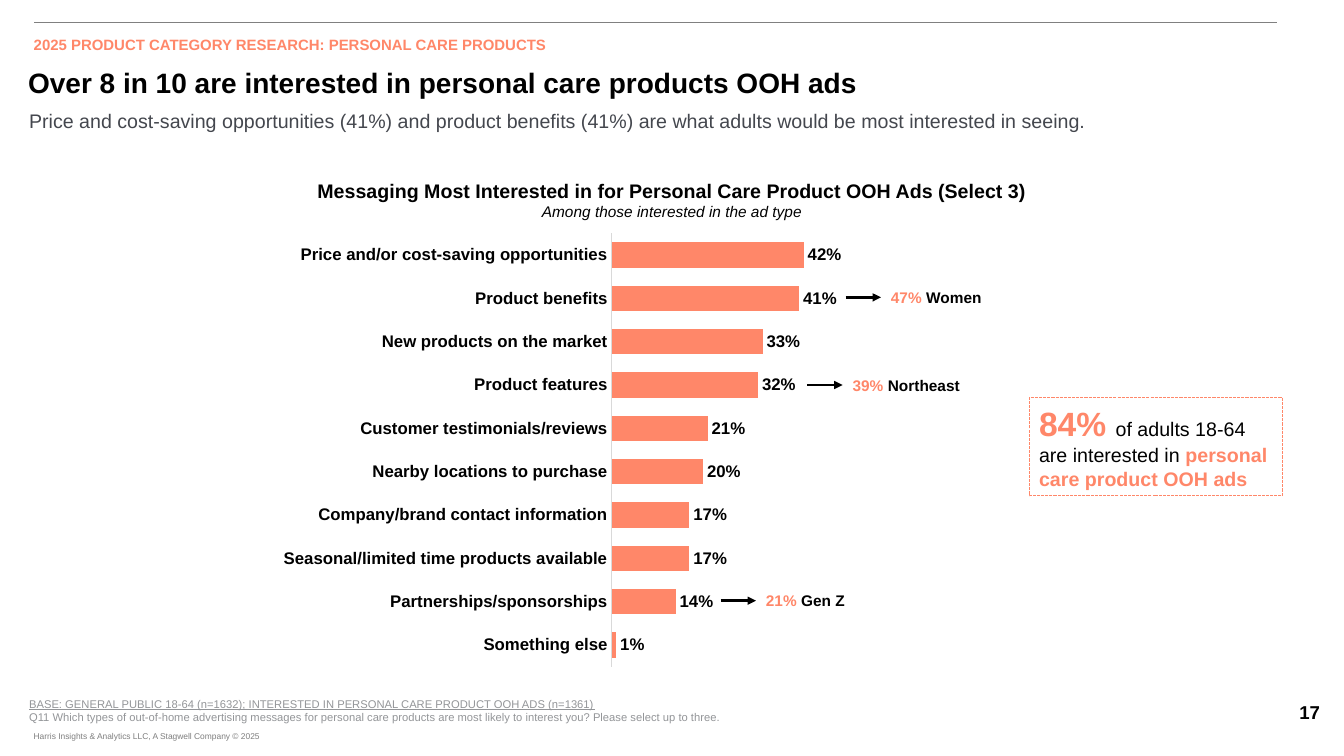
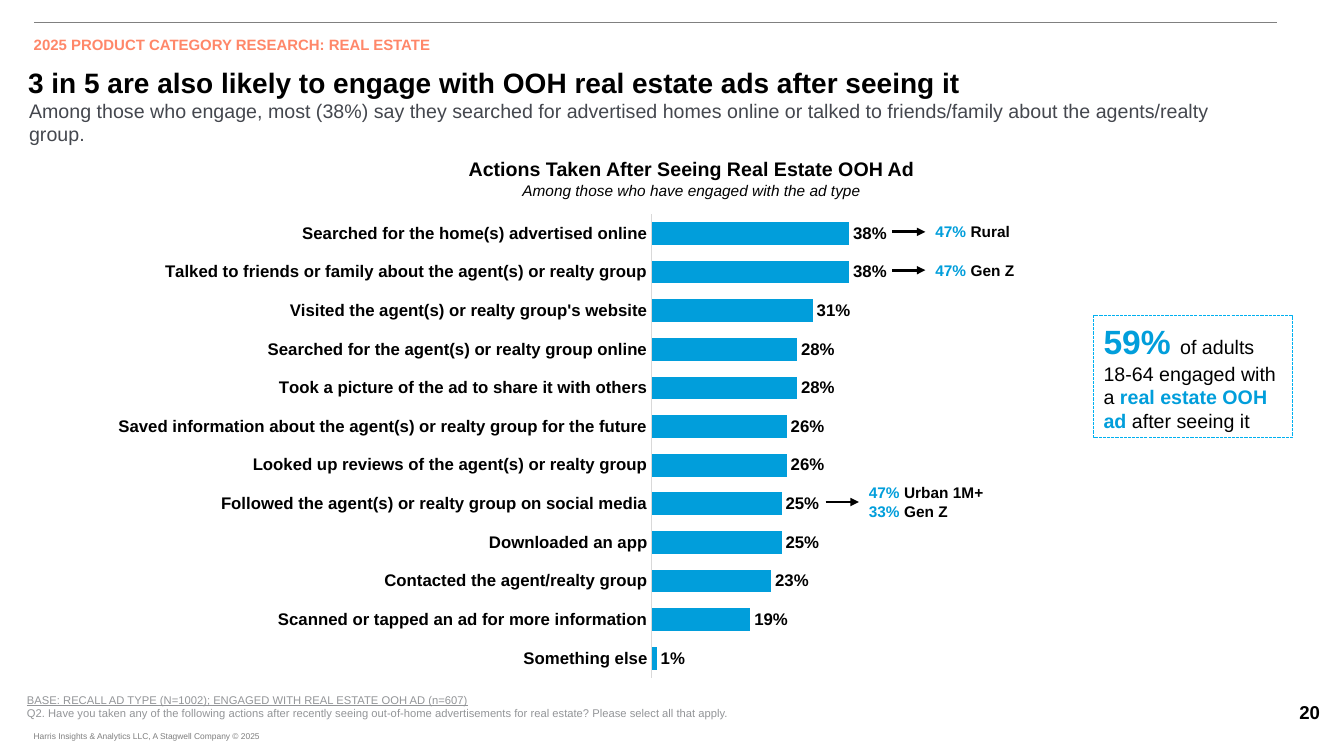
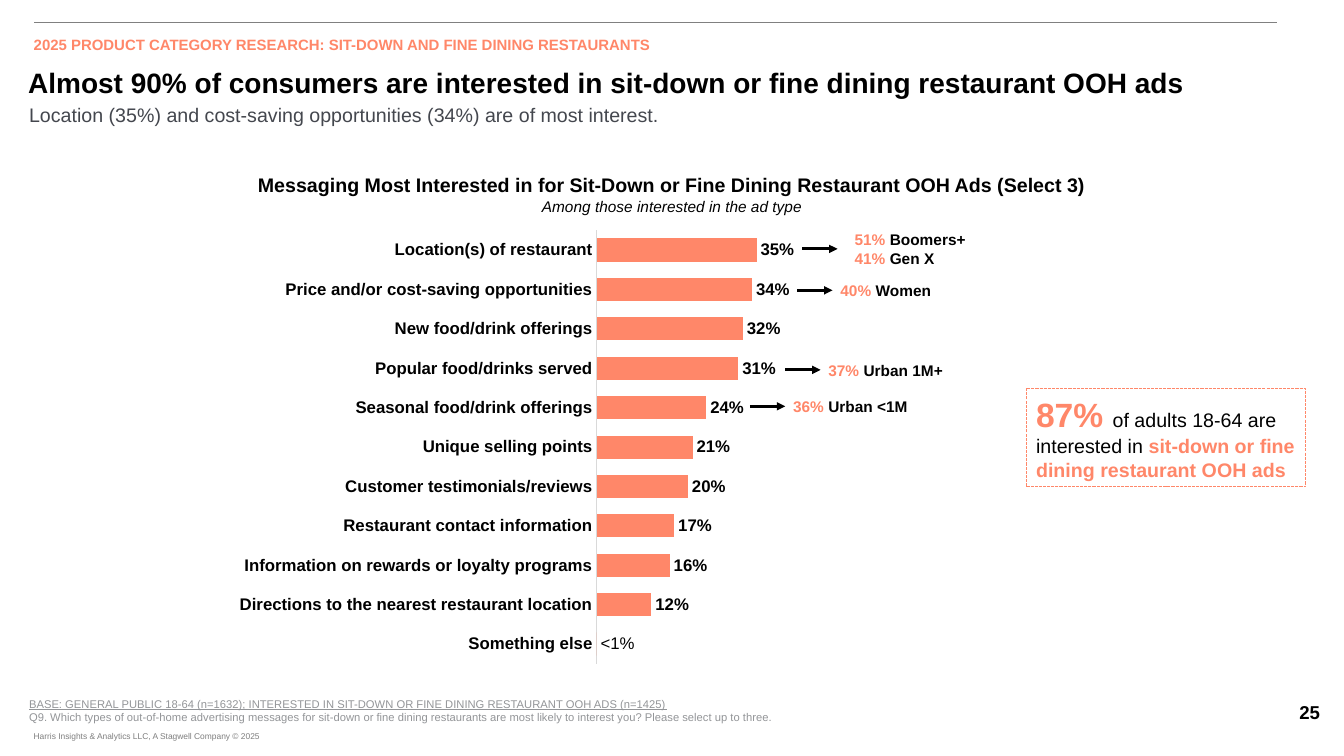
"""Build three research slides with bar charts of out-of-home advertising results."""
import lxml.etree
import pptx
import pptx.chart.data
import pptx.dml.color
import pptx.enum.chart
import pptx.enum.dml
import pptx.enum.shapes
import pptx.enum.text
import pptx.oxml.ns
import pptx.util

Pt = pptx.util.Pt
RGBColor = pptx.dml.color.RGBColor
qn = pptx.oxml.ns.qn
ALIGN = pptx.enum.text.PP_ALIGN
ANCHOR = pptx.enum.text.MSO_ANCHOR

FONT = "Arial"
BLACK = RGBColor(0x00, 0x00, 0x00)
CORAL = RGBColor(0xFF, 0x87, 0x69)
BLUE = RGBColor(0x01, 0x9E, 0xDB)
SKY = RGBColor(0x00, 0xB0, 0xF0)
SLATE = RGBColor(0x44, 0x47, 0x4E)
BASE_GREY = RGBColor(0x93, 0x95, 0x98)
COPYRIGHT_GREY = RGBColor(0x7F, 0x7F, 0x7F)
RULE_GREY = RGBColor(0x80, 0x80, 0x80)
AXIS_GREY = RGBColor(0xD9, 0xD9, 0xD9)

COPYRIGHT = "Harris Insights & Analytics LLC, A Stagwell Company © 2025"
KICKER = "2025 PRODUCT CATEGORY RESEARCH: "
INTERESTED = "Among those interested in the ad type"
CHART_TITLE_WIDTH = 671
CALLOUT_HEIGHT = 20

SLIDES = [
    {
        "number": "17", "accent": CORAL, "border": CORAL,
        "topic": "PERSONAL CARE PRODUCTS",
        "title": "Over 8 in 10 are interested in personal care products OOH ads",
        "subtitle": "Price and cost-saving opportunities (41%) and product benefits (41%) are what "
                    "adults would be most interested in seeing.",
        "subtitle_top": 74,
        "chart_title": "Messaging Most Interested in for Personal Care Product OOH Ads (Select 3)",
        "chart_note": INTERESTED, "chart_title_at": (480, 124),
        "chart_box": (59.8, 166.3, 736.6, 310.3),
        "bars": [
            ("Price and/or cost-saving opportunities", 0.42),
            ("Product benefits", 0.41),
            ("New products on the market", 0.33),
            ("Product features", 0.32),
            ("Customer testimonials/reviews", 0.21),
            ("Nearby locations to purchase", 0.2),
            ("Company/brand contact information", 0.17),
            ("Seasonal/limited time products available", 0.17),
            ("Partnerships/sponsorships", 0.14),
            ("Something else", 0.01),
        ],
        "arrow_length": 25.2,
        "callouts": [
            (604.1, 212.4, 0, [("47%", "Women")]),
            (576.7, 275, 0, [("39%", "Northeast")]),
            (514.8, 429.1, 0, [("21%", "Gen Z")]),
        ],
        "summary_box": (735.1, 283.7, 180.7, 70.6),
        "summary": ("84% ", "of adults 18-64 are interested in ", "personal care product OOH ads", ""),
        "base_at": (13.7, 494.5),
        "base": "BASE: GENERAL PUBLIC 18-64 (n=1632); INTERESTED IN PERSONAL CARE PRODUCT OOH ADS (n=1361)",
        "question": "Q11 Which types of out-of-home advertising messages for personal care products "
                    "are most likely to interest you? Please select up to three.",
    },
    {
        "number": "20", "accent": BLUE, "border": SKY,
        "topic": "REAL ESTATE",
        "title": "3 in 5 are also likely to engage with OOH real estate ads after seeing it",
        "subtitle": "Among those who engage, most (38%) say they searched for advertised homes online "
                    "or talked to friends/family about the agents/realty group.",
        "subtitle_top": 67,
        "chart_title": "Actions Taken After Seeing Real Estate OOH Ad",
        "chart_note": "Among those who have engaged with the ad type", "chart_title_at": (494, 108.7),
        "chart_box": (36.7, 152.6, 837.4, 331.9),
        "bars": [
            ("Searched for the home(s) advertised online", 0.38),
            ("Talked to friends or family about the agent(s) or realty group", 0.38),
            ("Visited the agent(s) or realty group's website", 0.31),
            ("Searched for the agent(s) or realty group online", 0.28),
            ("Took a picture of the ad to share it with others", 0.28),
            ("Saved information about the agent(s) or realty group for the future", 0.26),
            ("Looked up reviews of the agent(s) or realty group", 0.26),
            ("Followed the agent(s) or realty group on social media", 0.25),
            ("Downloaded an app", 0.25),
            ("Contacted the agent/realty group", 0.23),
            ("Scanned or tapped an ad for more information", 0.19),
            ("Something else", 0.01),
        ],
        "arrow_length": 23.8,
        "callouts": [
            (637.2, 165.6, 0, [("47%", "Rural")]),
            (637.2, 193, 0, [("47%", "Gen Z")]),
            (589.7, 358.6, 0, [("47%", "Urban 1M+"), ("33%", "Gen Z")]),
        ],
        "summary_box": (781.2, 225.4, 141.8, 87.1),
        "summary": ("59% ", "of adults 18-64 engaged with a ", "real estate OOH ad ", "after seeing it"),
        "base_at": (12.2, 491.6),
        "base": "BASE: RECALL AD TYPE (N=1002); ENGAGED WITH REAL ESTATE OOH AD (n=607)",
        "question": "Q2. Have you taken any of the following actions after recently seeing out-of-home "
                    "advertisements for real estate? Please select all that apply.",
    },
    {
        "number": "25", "accent": CORAL, "border": CORAL,
        "topic": "SIT-DOWN AND FINE DINING RESTAURANTS",
        "title": "Almost 90% of consumers are interested in sit-down or fine dining restaurant OOH ads",
        "subtitle": "Location (35%) and cost-saving opportunities (34%) are of most interest.",
        "subtitle_top": 70,
        "chart_title": "Messaging Most Interested in for Sit-Down or Fine Dining Restaurant OOH Ads (Select 3)",
        "chart_note": INTERESTED, "chart_title_at": (480, 120.2),
        "chart_box": (49, 164.2, 736.6, 310.3),
        "bars": [
            ("Location(s) of restaurant", 0.35),
            ("Price and/or cost-saving opportunities", 0.34),
            ("New food/drink offerings", 0.32),
            ("Popular food/drinks served", 0.31),
            ("Seasonal food/drink offerings", 0.24),
            ("Unique selling points", 0.21),
            ("Customer testimonials/reviews", 0.2),
            ("Restaurant contact information", 0.17),
            ("Information on rewards or loyalty programs", 0.16),
            ("Directions to the nearest restaurant location", 0.12),
            ("Something else", 0),
        ],
        "arrow_length": 25.2,
        "callouts": [
            (573.1, 177.8, 5, [("51%", "Boomers+"), ("41%", "Gen X")]),
            (569.5, 207.4, -1.5, [("40%", "Women")]),
            (560.9, 264.2, -1.5, [("37%", "Urban 1M+")]),
            (535.7, 290.2, -1.5, [("36%", "Urban <1M")]),
        ],
        "summary_box": (733, 277.2, 199.4, 70.6),
        "summary": ("87% ", "of adults 18-64 are interested in ",
                    "sit-down or fine dining restaurant OOH ads", ""),
        "base_at": (13.7, 494.5),
        "base": "BASE: GENERAL PUBLIC 18-64 (n=1632); INTERESTED IN SIT-DOWN OR FINE DINING "
                "RESTAURANT OOH ADS (n=1425)",
        "question": "Q9. Which types of out-of-home advertising messages for sit-down or fine dining "
                    "restaurants are most likely to interest you? Please select up to three.",
    },
]


def style_font(font, size=12, color=BLACK, bold=False, italic=False, underline=False):
    font.name, font.size = FONT, Pt(size)
    font.bold, font.italic, font.underline = bold, italic, underline
    font.color.rgb = color


def write(frame, paragraphs, align=ALIGN.LEFT, anchor=ANCHOR.TOP, wrap=True, **style):
    frame.word_wrap, frame.vertical_anchor = wrap, anchor
    if isinstance(paragraphs, str):
        paragraphs = [[(paragraphs, {})]]
    for index, runs in enumerate(paragraphs):
        paragraph = frame.add_paragraph() if index else frame.paragraphs[0]
        paragraph.alignment = align
        for text, changes in runs:
            run = paragraph.add_run()
            run.text = text
            style_font(run.font, **{**style, **changes})


def add_text(slide, box, paragraphs, **style):
    frame = slide.shapes.add_textbox(*map(Pt, box)).text_frame
    write(frame, paragraphs, **style)
    return frame


def add_line(slide, start, end, color, width, arrow=False):
    line = slide.shapes.add_connector(
        pptx.enum.shapes.MSO_CONNECTOR.STRAIGHT, *map(Pt, (*start, *end)))
    line.line.color.rgb, line.line.width = color, Pt(width)
    if arrow:
        lxml.etree.SubElement(line.line._get_or_add_ln(), qn("a:tailEnd"), type="triangle")
    lxml.etree.SubElement(line._element.spPr, qn("a:effectLst"))


def add_frame(slide, content):
    add_line(slide, (24.5, 16), (912.2, 16), RULE_GREY, 0.5)
    add_text(slide, (17, 22, 555, 21), KICKER + content["topic"], size=10.7, color=CORAL, bold=True)
    add_text(slide, (13, 43, 903, 28), content["title"], size=20, bold=True)
    add_text(slide, (13.7, content["subtitle_top"], 898, 27), content["subtitle"], size=14, color=SLATE)
    add_text(slide, (*content["base_at"], 839, 27),
             [[(content["base"], {"underline": True})], [(content["question"], {})]],
             size=8, color=BASE_GREY)
    copyright_line = add_text(slide, (24, 518.4, 172, 14.4), COPYRIGHT,
                              size=6, color=COPYRIGHT_GREY, wrap=False)
    copyright_line.margin_left = 0
    add_text(slide, (911, 497, 49, 24), content["number"], size=13.3, bold=True, align=ALIGN.CENTER)


def fix_plot_area(chart, **fractions):
    plot_area = chart._chartSpace.chart.plotArea
    for old_layout in plot_area.findall(qn("c:layout")):
        plot_area.remove(old_layout)
    layout = lxml.etree.SubElement(plot_area, qn("c:layout"))
    plot_area.insert(0, layout)
    manual = lxml.etree.SubElement(layout, qn("c:manualLayout"))
    settings = {"layoutTarget": "inner", "xMode": "edge", "yMode": "edge", **fractions}
    for tag, value in settings.items():
        lxml.etree.SubElement(manual, qn("c:" + tag), val=str(value))


def add_bars(slide, content):
    center, top = content["chart_title_at"]
    add_text(slide, (center - CHART_TITLE_WIDTH / 2, top, CHART_TITLE_WIDTH, 37.5),
             [[(content["chart_title"], {"size": 14, "bold": True})],
              [(content["chart_note"], {"size": 11, "italic": True})]], align=ALIGN.CENTER)

    labels, shares = zip(*content["bars"])
    data = pptx.chart.data.CategoryChartData(number_format="0%")
    data.categories = labels
    data.add_series("Share", shares)
    chart = slide.shapes.add_chart(pptx.enum.chart.XL_CHART_TYPE.BAR_CLUSTERED,
                                   *map(Pt, content["chart_box"]), data).chart
    chart.has_legend = chart.has_title = False
    style_font(chart.font, bold=True)
    fix_plot_area(chart, x=0.512, y=0, w=0.488, h=1)

    categories = chart.category_axis
    categories.reverse_order = True
    categories.major_tick_mark = pptx.enum.chart.XL_TICK_MARK.NONE
    categories.format.line.color.rgb = AXIS_GREY
    categories.format.line.width = Pt(0.75)
    style_font(categories.tick_labels.font, bold=True)
    scale = chart.value_axis
    scale.minimum_scale, scale.maximum_scale = 0, 1.1
    scale.has_major_gridlines = scale.visible = False

    plot = chart.plots[0]
    plot.gap_width, plot.overlap, plot.vary_by_categories = 70, -15, False
    series = plot.series[0]
    series.format.fill.solid()
    series.format.fill.fore_color.rgb = content["accent"]
    outside = pptx.enum.chart.XL_LABEL_POSITION.OUTSIDE_END
    values = series.data_labels
    values.show_value, values.position = True, outside
    values.number_format, values.number_format_is_linked = "0%", False
    style_font(values.font, bold=True)
    for index, share in enumerate(shares):
        if share == 0:
            label = series.points[index].data_label
            run = label.text_frame.paragraphs[0].add_run()
            run.text = "<1%"
            style_font(run.font)
            label.position = outside


def add_callouts(slide, content):
    for left, middle, gap, groups in content["callouts"]:
        tip = left + content["arrow_length"]
        add_line(slide, (left, middle), (tip, middle), BLACK, 2, arrow=True)
        height = CALLOUT_HEIGHT + 13 * (len(groups) - 1)
        add_text(slide, (tip + gap, middle - height / 2, 140, height),
                 [[(share + " ", {"color": content["accent"]}), (group, {})] for share, group in groups],
                 size=11, bold=True, anchor=ANCHOR.MIDDLE)


def add_summary(slide, content):
    box = slide.shapes.add_shape(pptx.enum.shapes.MSO_SHAPE.RECTANGLE, *map(Pt, content["summary_box"]))
    box.shadow.inherit = False
    box.fill.background()
    box.line.color.rgb, box.line.width = content["border"], Pt(0.75)
    box.line.dash_style = pptx.enum.dml.MSO_LINE.SQUARE_DOT
    share, audience, subject, ending = content["summary"]
    highlight = {"color": content["accent"], "bold": True}
    runs = [(share, {**highlight, "size": 24}), (audience, {}), (subject, highlight), (ending, {})]
    write(box.text_frame, [[run for run in runs if run[0]]], size=14, anchor=ANCHOR.MIDDLE)


def main():
    deck = pptx.Presentation()
    deck.slide_width, deck.slide_height = Pt(960), Pt(540)
    for content in SLIDES:
        slide = deck.slides.add_slide(deck.slide_layouts[6])
        for add_part in (add_frame, add_bars, add_callouts, add_summary):
            add_part(slide, content)
    deck.save("out.pptx")


if __name__ == "__main__":
    main()
